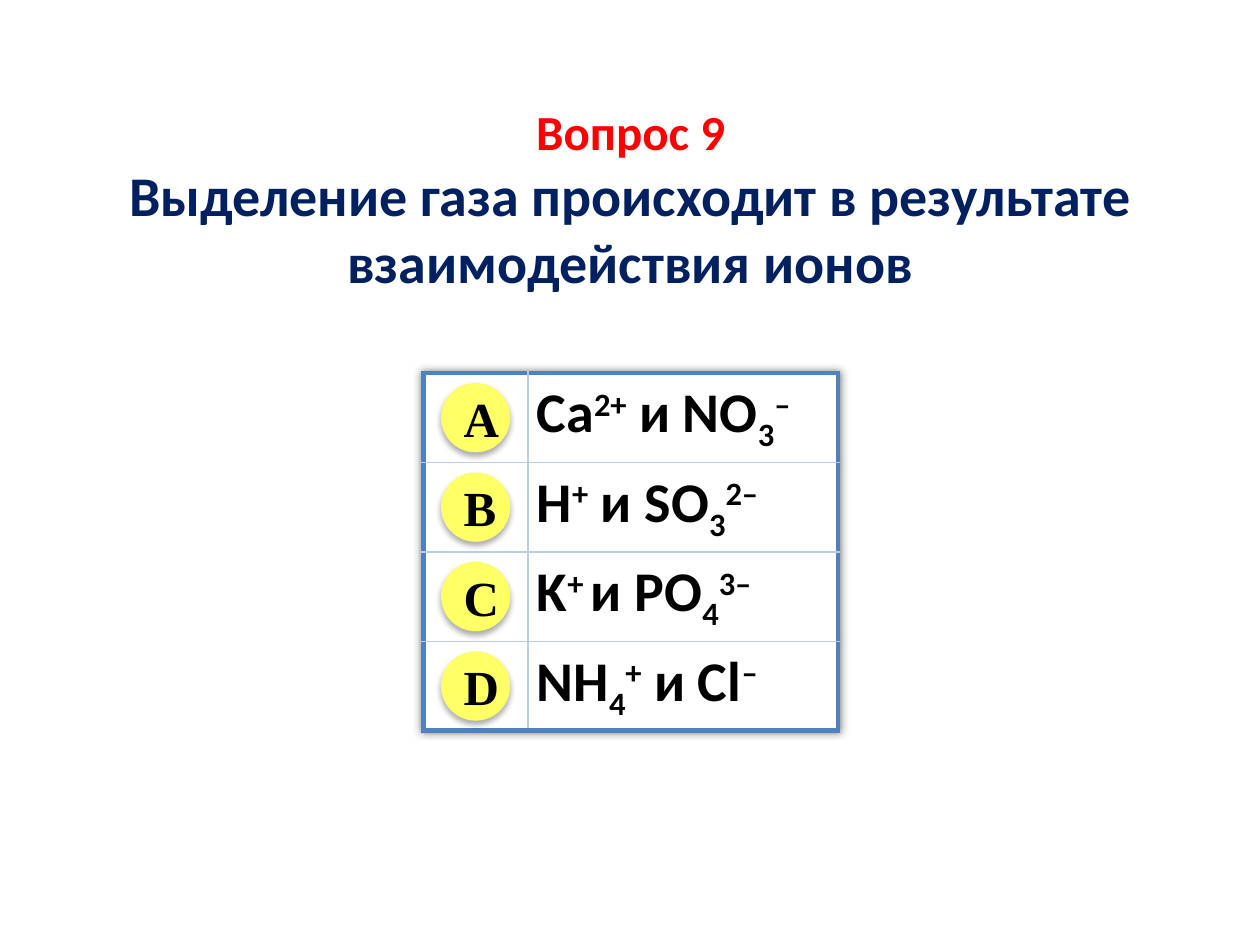
from dataclasses import dataclass

from lxml import etree
from pptx import Presentation
from pptx.dml.color import RGBColor
from pptx.enum import shapes as shp
from pptx.enum import text as txt
from pptx.oxml import ns
from pptx.util import Inches, Pt

COLORS = {"white": "FFFFFF", "black": "000000", "red": "FF0000", "navy": "002060",
          "yellow": "FFFF66", "frame": "4F81BD", "grid": "B9CDE5"}
SUP, SUB = 30, -25
TABLE_LEFT, TABLE_TOP, ROW_HEIGHT = 3.36, 2.96, 0.71
COLUMN_WIDTHS = (0.83, 2.46)
BADGE_SIZE = 0.55


@dataclass
class Answer:
    letter: str
    ions: list[tuple[str, int]]


ANSWERS = [
    Answer("A", [("Ca", 0), ("2+", SUP), (" и NO", 0), ("3", SUB), ("–", SUP)]),
    Answer("B", [("H", 0), ("+", SUP), (" и SO", 0), ("3", SUB), ("2–", SUP)]),
    Answer("C", [("K", 0), ("+ ", SUP), ("и PO", 0), ("4", SUB), ("3–", SUP)]),
    Answer("D", [("NH", 0), ("4", SUB), ("+", SUP), (" и Cl", 0), ("–", SUP)]),
]


def rgb(name: str) -> RGBColor:
    return RGBColor.from_string(COLORS[name])


def style(paragraph, face: str, size: float, color: str) -> None:
    font = paragraph.font
    font.name, font.size, font.bold = face, Pt(size), True
    font.color.rgb = rgb(color)


def add_color(parent, name: str):
    color = etree.SubElement(parent, ns.qn("a:srgbClr"))
    color.set("val", COLORS[name])
    return color


def add_shadow(effects, blur: float, distance: float, opacity: int) -> None:
    shadow = etree.SubElement(effects, ns.qn("a:outerShdw"), blurRad=str(Pt(blur)),
                              dist=str(Pt(distance)), dir="5400000", rotWithShape="0")
    etree.SubElement(add_color(shadow, "black"), ns.qn("a:alpha"), val=str(opacity * 1000))


def add_border(cell, side: str, outer: bool) -> None:
    line = etree.SubElement(cell._tc.get_or_add_tcPr(), ns.qn(f"a:ln{side}"),
                            w=str(Pt(3 if outer else 1)))
    fill = etree.SubElement(line, ns.qn("a:solidFill"))
    add_color(fill, "frame" if outer else "grid")


def add_answers(slide) -> None:
    """Draw the answer table with a blue frame and a thin inner grid."""
    last = len(ANSWERS) - 1
    frame = slide.shapes.add_table(
        len(ANSWERS), 2, Inches(TABLE_LEFT), Inches(TABLE_TOP),
        Inches(sum(COLUMN_WIDTHS)), Inches(ROW_HEIGHT * len(ANSWERS)))
    table = frame.table
    table.first_row = table.horz_banding = False
    effects = etree.Element(ns.qn("a:effectLst"))
    table._tbl.tblPr.insert(0, effects)
    add_shadow(effects, blur=5, distance=0, opacity=50)
    for column, width in zip(table.columns, COLUMN_WIDTHS):
        column.width = Inches(width)
    for i, answer in enumerate(ANSWERS):
        table.rows[i].height = Inches(ROW_HEIGHT)
        for j, cell in enumerate(table.rows[i].cells):
            for side, outer in (("L", j == 0), ("R", j == 1), ("T", i == 0), ("B", i == last)):
                add_border(cell, side, outer)
            cell.fill.solid()
            cell.fill.fore_color.rgb = rgb("white")
            cell.margin_left = cell.margin_right = Inches(0.07)
            cell.margin_top = cell.margin_bottom = 0
            cell.vertical_anchor = txt.MSO_ANCHOR.MIDDLE
        formula = table.cell(i, 1).text_frame.paragraphs[0]
        for part, baseline in answer.ions:
            run = formula.add_run()
            run.text = part
            style(run, "Calibri", 32, "black")
            if baseline:
                run._r.get_or_add_rPr().set("baseline", str(baseline * 1000))


def add_badge(slide, letter: str, row: int) -> None:
    badge = slide.shapes.add_shape(
        shp.MSO_SHAPE.OVAL, Inches(TABLE_LEFT + 0.14),
        Inches(TABLE_TOP + 0.08 + row * ROW_HEIGHT), Inches(BADGE_SIZE), Inches(BADGE_SIZE))
    badge.fill.solid()
    badge.fill.fore_color.rgb = rgb("yellow")
    badge.line.fill.background()
    badge.shadow.inherit = False
    add_shadow(badge._element.spPr.find(ns.qn("a:effectLst")), blur=3.5, distance=2.2, opacity=32)
    badge.text_frame.vertical_anchor = txt.MSO_ANCHOR.MIDDLE
    caption = badge.text_frame.paragraphs[0]
    caption.text = letter
    caption.alignment = txt.PP_ALIGN.CENTER
    style(caption, "Times New Roman", 28, "black")


def add_question(slide) -> None:
    question = slide.shapes.add_textbox(Inches(0.24), Inches(0.76), Inches(9.53), Inches(1.65))
    question.fill.solid()
    question.fill.fore_color.rgb = rgb("white")
    frame = question.text_frame
    frame.word_wrap = True
    frame.auto_size = txt.MSO_AUTO_SIZE.SHAPE_TO_FIT_TEXT
    heading, wording = frame.paragraphs[0], frame.add_paragraph()
    heading.text = "Вопрос 9"
    wording.text = "Выделение газа происходит в результате взаимодействия ионов"
    style(heading, "Calibri", 28, "red")
    style(wording, "Calibri", 32, "navy")
    heading.alignment = wording.alignment = txt.PP_ALIGN.CENTER


def main() -> None:
    deck = Presentation()
    deck.slide_width, deck.slide_height = Inches(10), Inches(7.5)
    slide = deck.slides.add_slide(deck.slide_layouts[6])
    add_answers(slide)
    for row, answer in enumerate(ANSWERS):
        add_badge(slide, answer.letter, row)
    add_question(slide)
    deck.save("out.pptx")


if __name__ == "__main__":
    main()
